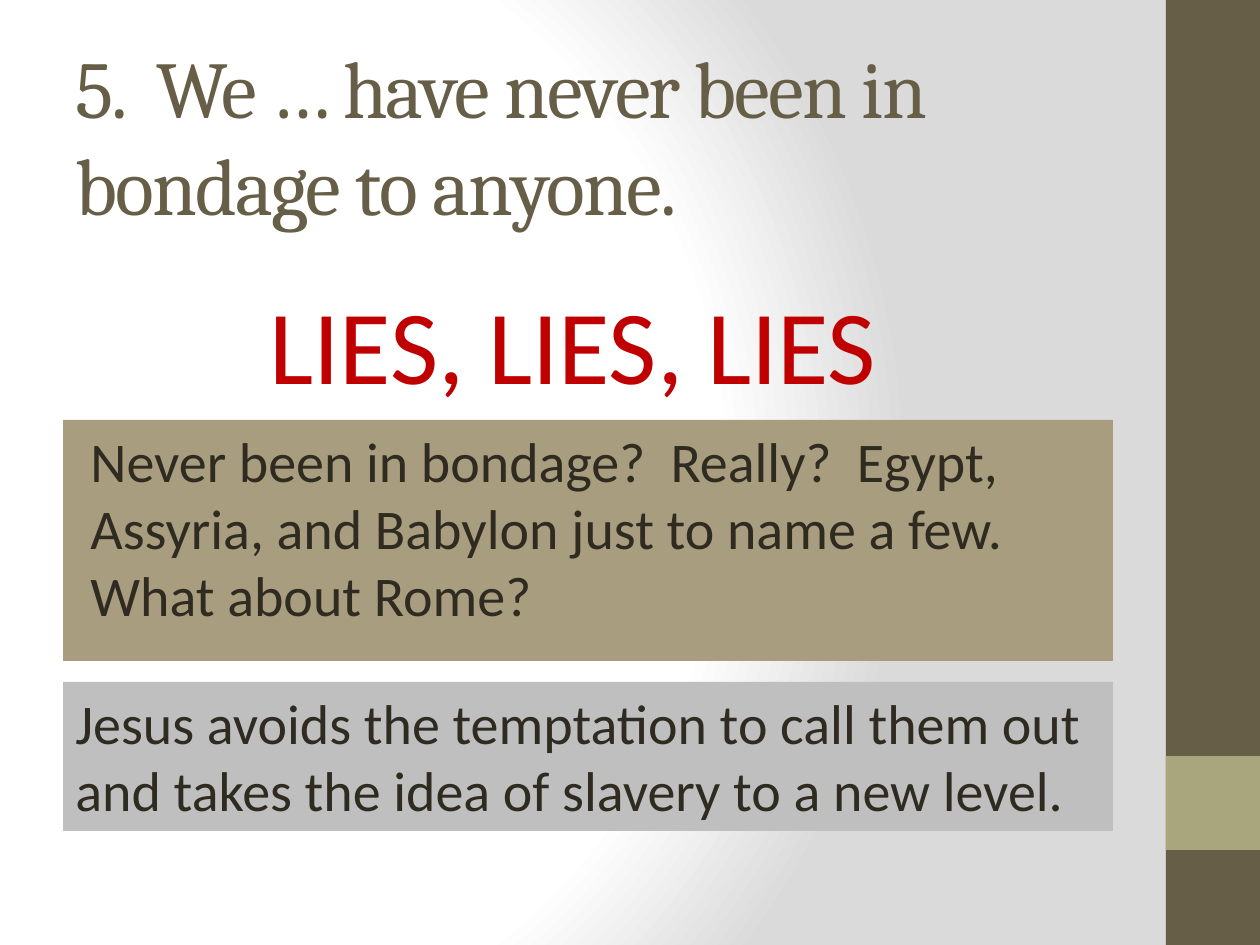
from lxml import etree
from pptx import Presentation
from pptx.dml.color import RGBColor
from pptx.enum.shapes import MSO_SHAPE
from pptx.enum.text import MSO_ANCHOR as Anchor, PP_ALIGN as Align
from pptx.oxml import parse_xml
from pptx.oxml.ns import nsdecls, qn
from pptx.util import Emu, Pt

PX_PER_INCH = 126
BROWN, OLIVE, TAN, GREY = "675E47", "A9A57C", "A89D7F", "BFBFBF"
INK, RED = "2F2B20", "C00000"
TITLE = {"name": "Cambria", "size": Pt(46)}
BODY = {"name": "Calibri", "size": Pt(32)}
SHOUT = {"name": "Calibri", "size": Pt(60)}
INDENT = 15
LEFT, WIDTH = 63, 1050
BAR_LEFT, BAR_WIDTH = 1166, 94


def px(length):
    return Emu(round(length * 914400 / PX_PER_INCH))


def color(hex_text):
    return RGBColor.from_string(hex_text)


def set_background(page):
    """Radial gradient, white at the focus and grey at the far edge."""
    stops = "".join(
        f'<a:gs pos="{percent * 1000}"><a:srgbClr val="{shade}"/></a:gs>'
        for percent, shade in ((0, "FFFFFF"), (75, "FFFFFF"), (100, "DADADA"))
    )
    page.background.fill.solid()
    solid = next(page.element.iter(qn("a:solidFill")))
    gradient = parse_xml(
        f'<a:gradFill {nsdecls("a")} rotWithShape="1"><a:gsLst>{stops}</a:gsLst>'
        '<a:path path="circle">'
        '<a:fillToRect l="20000" t="50000" r="100000" b="50000"/>'
        "</a:path></a:gradFill>"
    )
    solid.getparent().replace(solid, gradient)


def add_block(page, left, top, width, height, fill):
    block = page.shapes.add_shape(
        MSO_SHAPE.RECTANGLE, px(left), px(top), px(width), px(height)
    )
    block.shadow.inherit = False
    block.fill.solid()
    block.fill.fore_color.rgb = color(fill)
    block.line.fill.background()
    return block


def add_text_box(page, left, top, width, height):
    return page.shapes.add_textbox(px(left), px(top), px(width), px(height))


def write(box, text, style, shade, anchor=Anchor.TOP, indent=0):
    """Put one left-aligned paragraph in the box and return its run."""
    frame = box.text_frame
    frame.word_wrap = True
    frame.vertical_anchor = anchor
    para = frame.paragraphs[0]
    para.alignment = Align.LEFT
    if indent:
        props = para._p.get_or_add_pPr()
        props.set("marL", str(px(indent)))
        props.set("indent", "0")
    span = para.add_run()
    span.text = text
    for name, value in style.items():
        setattr(span.font, name, value)
    span.font.color.rgb = color(shade)
    return span


def main():
    deck = Presentation()
    deck.slide_width, deck.slide_height = px(1260), px(945)
    page = deck.slides.add_slide(deck.slide_layouts[6])
    set_background(page)

    add_block(page, BAR_LEFT, 0, BAR_WIDTH, 945, BROWN)
    add_block(page, BAR_LEFT, 756, BAR_WIDTH, 94, OLIVE)

    title = add_text_box(page, LEFT, 38, WIDTH, 193)
    heading = write(title, "5.  We … have never been in bondage to anyone.",
                    TITLE, BROWN, Anchor.MIDDLE)
    heading.font._element.set("spc", "-100")

    question = add_block(page, LEFT, 420, WIDTH, 241, TAN)
    write(question, "Never been in bondage?  Really?  Egypt, Assyria, and Babylon "
          "just to name a few.  What about Rome?", BODY, INK, indent=INDENT)

    shout = add_text_box(page, 242, 273, 683, 136)
    write(shout, "LIES, LIES, LIES", SHOUT, RED, indent=INDENT)

    answer = add_block(page, LEFT, 682, WIDTH, 149, GREY)
    write(answer, "Jesus avoids the temptation to call them out and takes the idea "
          "of slavery to a new level.", BODY, INK)

    deck.save("out.pptx")


if __name__ == "__main__":
    main()
